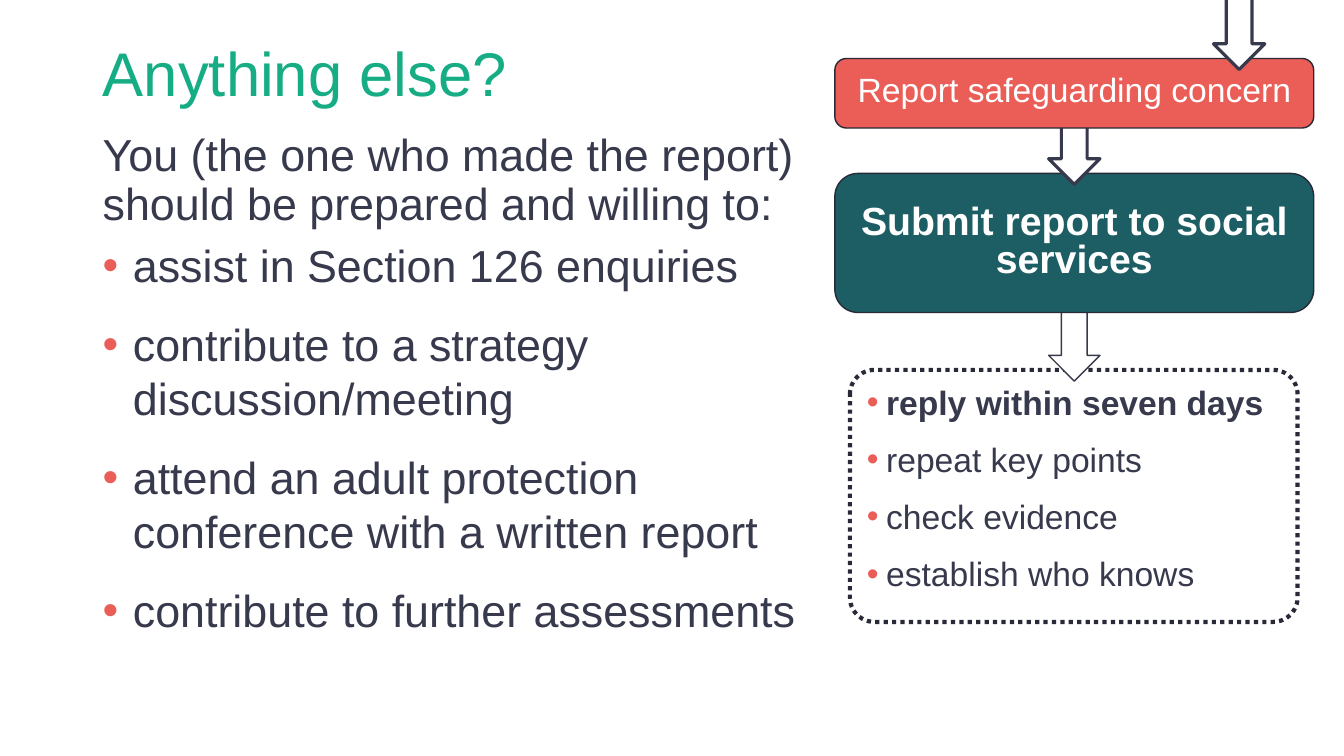
import pptx
import pptx.util
import pptx.dml.color
import pptx.enum.dml
import pptx.enum.shapes
import pptx.enum.text
import pptx.oxml.ns
from dataclasses import dataclass
from lxml import etree

Inches, Pt = pptx.util.Inches, pptx.util.Pt
SHAPE = pptx.enum.shapes.MSO_SHAPE
ANCHOR = pptx.enum.text.MSO_ANCHOR
ALIGN = pptx.enum.text.PP_ALIGN
AUTO = pptx.enum.text.MSO_AUTO_SIZE


@dataclass(frozen=True)
class Theme:
    font: str = "Arial"
    green: str = "16AD85"
    ink: str = "37394C"
    outline: str = "292A38"
    coral: str = "EB5E57"
    teal: str = "1C5E64"
    white: str = "FFFFFF"
    title: int = 44
    body: int = 32
    step: int = 28
    small: int = 24


T = Theme()


def rgb(value):
    return pptx.dml.color.RGBColor.from_string(value)


def add_bullet(p, indent):
    pPr = p._p.get_or_add_pPr()
    pPr.set("marL", str(Inches(indent)))
    pPr.set("indent", str(-Inches(indent)))
    qn = pptx.oxml.ns.qn
    colour = etree.SubElement(pPr, qn("a:buClr"))
    etree.SubElement(colour, qn("a:srgbClr"), val=T.coral)
    etree.SubElement(pPr, qn("a:buFont"), typeface=T.font)
    etree.SubElement(pPr, qn("a:buChar"), char="•")


def write(tf, text, size, color=T.ink, bold=False, align=ALIGN.LEFT,
          spacing=None, after=0, indent=None):
    """Write one paragraph, using the frame's empty first one if it is free."""
    p = tf.paragraphs[0]
    if p.runs:
        p = tf.add_paragraph()
    if indent:
        add_bullet(p, indent)
    p.alignment = align
    p.space_before, p.space_after = Pt(0), Pt(after)
    if spacing:
        p.line_spacing = spacing
    r = p.add_run()
    r.text = text
    r.font.name, r.font.size, r.font.bold = T.font, Pt(size), bold
    r.font.color.rgb = rgb(color)


def add_box(s, kind, box, fill, line, weight):
    sp = s.shapes.add_shape(kind, *map(Inches, box))
    sp.shadow.inherit = False
    sp.fill.solid()
    sp.fill.fore_color.rgb = rgb(fill)
    sp.line.color.rgb = rgb(line)
    sp.line.width = Pt(weight)
    sp.text_frame.word_wrap = True
    return sp


def add_title(s, box, text):
    sp = s.shapes.title
    sp.left, sp.top, sp.width, sp.height = map(Inches, box)
    tf = sp.text_frame
    tf.auto_size, tf.vertical_anchor = AUTO.NONE, ANCHOR.MIDDLE
    write(tf, text, T.title, T.green, spacing=0.9)


def add_body(s, box, lead, items):
    tf = s.shapes.add_textbox(*map(Inches, box)).text_frame
    tf.word_wrap, tf.auto_size = True, AUTO.SHAPE_TO_FIT_TEXT
    write(tf, lead, T.body, spacing=0.9, after=6)
    for item in items:
        write(tf, item, T.body, after=18, indent=0.3)


def add_step(s, box, text, fill, size, bold=False):
    sp = add_box(s, SHAPE.ROUNDED_RECTANGLE, box, fill, T.outline, 1)
    sp.text_frame.vertical_anchor = ANCHOR.MIDDLE
    write(sp.text_frame, text, size, T.white, bold, ALIGN.CENTER, 0.8)


def add_arrow(s, center, start, end, weight=2.25):
    """Join two edges, running a little way into the boxes on both sides."""
    width, overlap = 0.51, 0.11
    box = (center - width / 2, start - overlap, width, end - start + 2 * overlap)
    add_box(s, SHAPE.DOWN_ARROW, box, T.white, T.ink, weight)


def add_checklist(s, box, items):
    sp = add_box(s, SHAPE.ROUNDED_RECTANGLE, box, T.white, T.outline, 3)
    sp.adjustments[0] = 0.097
    sp.line.dash_style = pptx.enum.dml.MSO_LINE.ROUND_DOT
    sp.text_frame.vertical_anchor = ANCHOR.TOP
    for i, item in enumerate(items):
        write(sp.text_frame, item, T.small, bold=i == 0, after=12, indent=0.19)


def add_flow(s, left, top, width):
    """Stack the steps from the bottom up, so each covers its arrow's tail."""
    center = left + width / 2
    report_end = top + 0.69
    submit_top = top + 1.14
    submit_end = submit_top + 1.38
    list_top = top + 3.09
    add_checklist(s, (left + 0.15, list_top, width - 0.31, 2.5), [
        "reply within seven days", "repeat key points",
        "check evidence", "establish who knows"])
    add_arrow(s, center, submit_end, list_top, weight=1)
    add_step(s, (left, submit_top, width, 1.38),
             "Submit report to social services", T.teal, T.step, bold=True)
    add_arrow(s, center, report_end, submit_top)
    add_step(s, (left, top, width, 0.69),
             "Report safeguarding concern", T.coral, T.small)
    # Arrow arriving from the top edge
    add_arrow(s, left + width - 0.74, 0.03, top)


def main():
    prs = pptx.Presentation()
    prs.slide_width, prs.slide_height = Inches(13.33), Inches(7.5)
    s = prs.slides.add_slide(prs.slide_layouts.get_by_name("Title Only"))
    # Left column
    add_title(s, (0.92, 0.4, 6.98, 0.72), "Anything else?")
    add_body(s, (0.92, 1.27, 7.36, 5.14),
             "You (the one who made the report) should be prepared and willing to:",
             ["assist in Section 126 enquiries",
              "contribute to a strategy discussion/meeting",
              "attend an adult protection conference with a written report",
              "contribute to further assessments"])
    # Right column
    add_flow(s, 8.28, 0.58, 4.75)
    prs.save("out.pptx")


if __name__ == "__main__":
    main()
